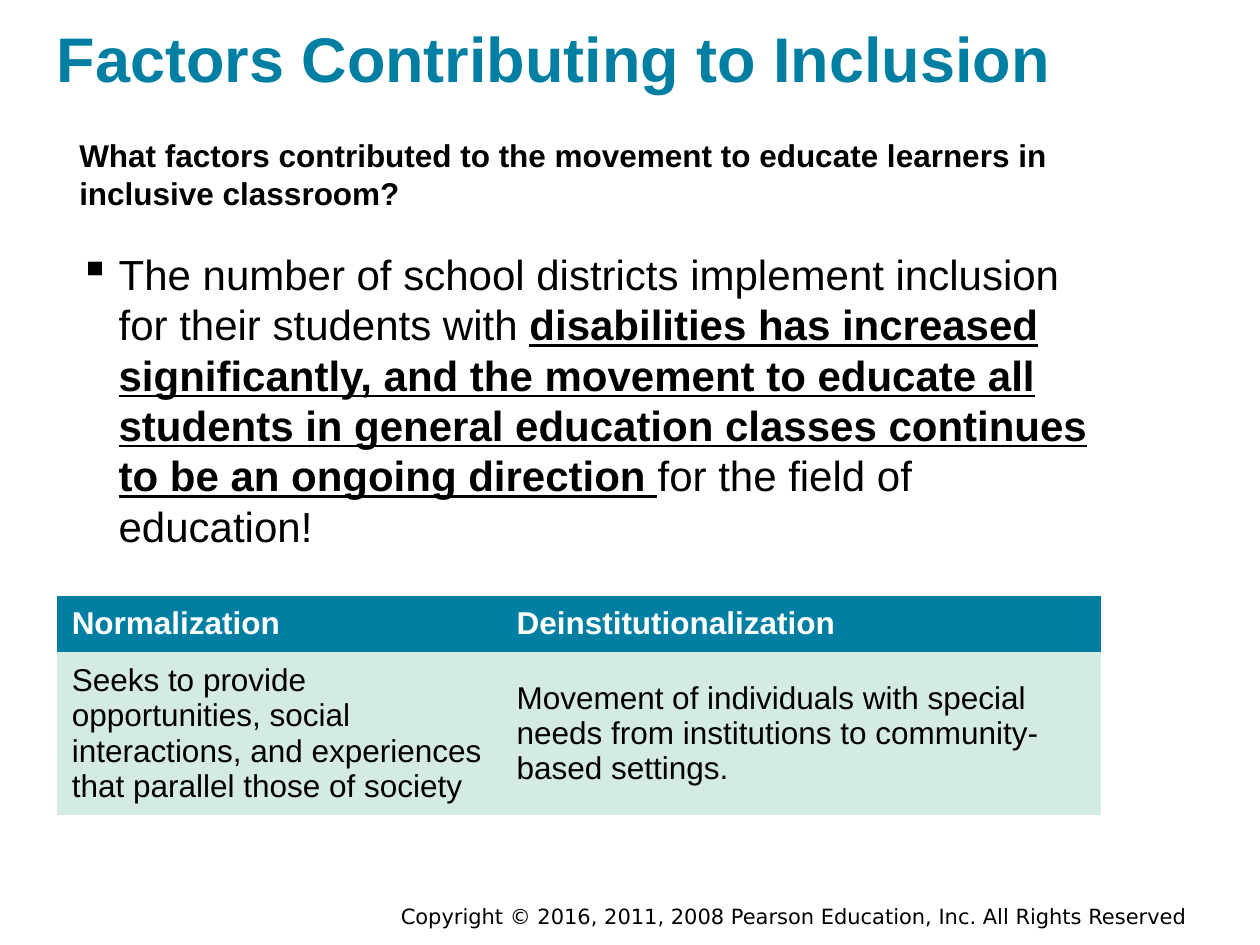
from lxml import etree
from pptx import Presentation
from pptx.dml.color import RGBColor
from pptx.enum import text
from pptx.oxml import ns
from pptx.util import Pt

TEAL = RGBColor(0x00, 0x7F, 0xA3)
MINT = RGBColor(0xD4, 0xEA, 0xE4)
BLACK = RGBColor(0x00, 0x00, 0x00)
WHITE = RGBColor(0xFF, 0xFF, 0xFF)

QUESTION = ("What factors contributed to the movement to educate learners "
            "in inclusive classroom?")
TREND = [
    ("The number of school districts implement inclusion for their students with ", False),
    ("disabilities has increased significantly, and the movement to educate all students "
     "in general education classes continues to be an ongoing direction ", True),
    ("for the field of education!", False),
]
FACTORS = [
    ("Normalization", "Deinstitutionalization"),
    ("Seeks to provide opportunities, social interactions, and experiences "
     "that parallel those of society",
     "Movement of individuals with special needs from institutions to "
     "community-based settings."),
]


def set_all(target, values):
    for name, value in values.items():
        setattr(target, name, value)


def add_span(para, words, size, color=BLACK, name="Arial", **style):
    span = para.add_run()
    span.text = words
    set_all(span.font, {"size": Pt(size), "name": name, **style})
    span.font.color.rgb = color


def place(shape, box):
    set_all(shape, dict(zip(("left", "top", "width", "height"), map(Pt, box))))


def format_frame(frame, side, edge, anchor):
    set_all(frame, {
        "word_wrap": True, "auto_size": text.MSO_AUTO_SIZE.NONE,
        "vertical_anchor": anchor,
        "margin_left": Pt(side), "margin_right": Pt(side),
        "margin_top": Pt(edge), "margin_bottom": Pt(edge),
    })


def add_text_box(page, box, side, edge, anchor):
    shape = page.shapes.add_textbox(*map(Pt, box))
    format_frame(shape.text_frame, side, edge, anchor)
    return shape.text_frame


def add_title(page, box):
    title = page.shapes.title
    place(title, box)
    format_frame(title.text_frame, 0, 1.44, text.MSO_ANCHOR.MIDDLE)
    para = title.text_frame.paragraphs[0]
    para.alignment = text.PP_ALIGN.LEFT
    add_span(para, "Factors Contributing to Inclusion", 36, TEAL, bold=True)


def add_body(page, box):
    frame = add_text_box(page, box, 7.2, 3.6, text.MSO_ANCHOR.TOP)
    add_span(frame.paragraphs[0], QUESTION, 18, bold=True)

    # Square bullet with a hanging indent
    para = frame.add_paragraph()
    para.space_before = Pt(21)
    properties = para._p.get_or_add_pPr()
    properties.set("marL", str(Pt(22.5)))
    properties.set("indent", str(Pt(-22.5)))
    etree.SubElement(properties, ns.qn("a:buChar"), char="▪")
    for words, stressed in TREND:
        add_span(para, words, 24, bold=stressed, underline=stressed)


def add_factor_table(page, box, column_widths, row_heights):
    table = page.shapes.add_table(len(FACTORS), len(FACTORS[0]), *map(Pt, box)).table
    for column, width in zip(table.columns, column_widths):
        column.width = Pt(width)
    for r, (row, height) in enumerate(zip(FACTORS, row_heights)):
        table.rows[r].height = Pt(height)
        header = r == 0
        for c, words in enumerate(row):
            cell = table.cell(r, c)
            set_all(cell, {
                "vertical_anchor": text.MSO_ANCHOR.MIDDLE,
                "margin_left": Pt(8.64), "margin_right": Pt(8.64),
                "margin_top": Pt(3.6), "margin_bottom": Pt(3.6),
            })
            cell.fill.solid()
            cell.fill.fore_color.rgb = TEAL if header else MINT
            # No rules between the cells
            for side in ("a:lnB", "a:lnT", "a:lnR", "a:lnL"):
                line = etree.Element(ns.qn(side), w="0")
                etree.SubElement(line, ns.qn("a:noFill"))
                cell._tc.get_or_add_tcPr().insert(0, line)
            add_span(cell.text_frame.paragraphs[0], words, 18,
                     WHITE if header else BLACK, bold=header)


def add_footer(page, box):
    frame = add_text_box(page, box, 0, 1.44, text.MSO_ANCHOR.MIDDLE)
    add_span(frame.paragraphs[0],
             "Copyright © 2016, 2011, 2008 Pearson Education, Inc. All Rights Reserved",
             12, name="DejaVu Sans")


def main():
    deck = Presentation()
    set_all(deck, {"slide_width": Pt(720), "slide_height": Pt(540)})
    page = deck.slides.add_slide(deck.slide_layouts[5])
    add_footer(page, (229, 514.8, 467.3, 17.3))
    add_title(page, (32.4, 9.4, 650.2, 46.8))
    add_factor_table(page, (32.4, 340.6, 596.9, 125.3), (254.2, 342.7), (31.7, 93.6))
    add_body(page, (38.2, 74.2, 596.9, 264.2))
    deck.save("out.pptx")


if __name__ == "__main__":
    main()
